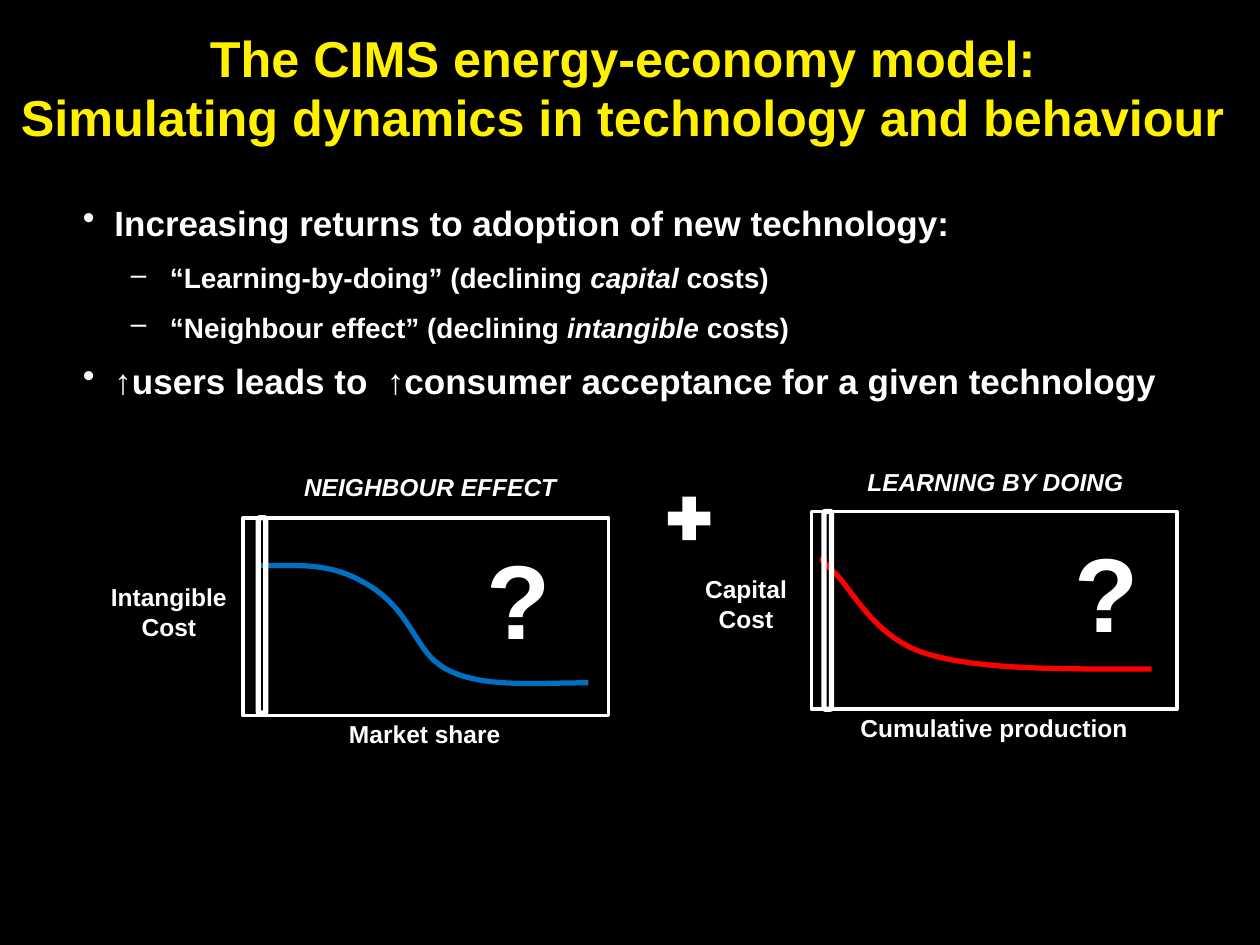
from pptx import Presentation
from pptx.dml.color import RGBColor
from pptx.enum.shapes import MSO_SHAPE
from pptx.enum.text import PP_ALIGN
from pptx.util import Pt
from lxml.etree import SubElement
from pptx.oxml.ns import qn

BLACK = RGBColor(0x00, 0x00, 0x00)
WHITE = RGBColor(0xFF, 0xFF, 0xFF)
PALE = RGBColor(0xF9, 0xF9, 0xF9)
YELLOW = RGBColor(0xFF, 0xF1, 0x00)
BLUE = RGBColor(0x00, 0x70, 0xC0)
RED = RGBColor(0xFF, 0x00, 0x00)


class Deck:
    font = "Arial"
    ink = WHITE
    steps = 16

    def __init__(self, slide):
        self.slide = slide
        self.shapes = slide.shapes
        slide.background.fill.solid()
        slide.background.fill.fore_color.rgb = BLACK

    def frame(self, box, inset=3.6):
        frame = self.shapes.add_textbox(*map(Pt, box)).text_frame
        frame.word_wrap = True
        frame.margin_top = Pt(inset)
        return frame

    def run(self, para, text, size, color=None, slant=False):
        run = para.add_run()
        run.text = text
        font = run.font
        font.name, font.size = self.font, Pt(size)
        font.bold, font.italic = True, slant
        font.color.rgb = color or self.ink

    def title(self, box, lines, size, color):
        para = self.frame(box, 5.8).paragraphs[0]
        para.alignment = PP_ALIGN.CENTER
        para.line_spacing = Pt(34)
        for i, line in enumerate(lines):
            if i:
                para.add_line_break()
            self.run(para, line, size, color)

    def label(self, box, lines, size=14, slant=False):
        frame = self.frame(box)
        for i, line in enumerate(lines):
            para = frame.add_paragraph() if i else frame.paragraphs[0]
            para.alignment = PP_ALIGN.CENTER
            self.run(para, line, size, slant=slant)

    def bullets(self, box, items):
        styles = [(20, 18, 18, "•", PALE, 10), (16, 49.68, 22.32, "–", WHITE, 9)]
        frame = self.frame(box, 6.3)
        for i, (level, runs) in enumerate(items):
            size, left, hang, mark, color, after = styles[level]
            para = frame.add_paragraph() if i else frame.paragraphs[0]
            para.level = level
            para.space_after = Pt(after)
            props = para._p.get_or_add_pPr()
            props.set("marL", str(Pt(left)))
            props.set("indent", str(-Pt(hang)))
            tint = SubElement(props, qn("a:buClr"))
            SubElement(tint, qn("a:srgbClr")).set("val", str(color))
            SubElement(props, qn("a:buChar")).set("char", mark)
            for text, slant in runs:
                self.run(para, text, size, slant=slant)

    def outline(self, kind, box, width):
        shape = self.shapes.add_shape(kind, *map(Pt, box))
        shape.shadow.inherit = False
        shape.fill.background()
        shape.line.color.rgb = self.ink
        shape.line.width = Pt(width)

    def solid(self, kind, box):
        shape = self.shapes.add_shape(kind, *map(Pt, box))
        shape.shadow.inherit = False
        shape.fill.solid()
        shape.fill.fore_color.rgb = self.ink
        shape.line.fill.background()

    def curve(self, knots, color):
        dots = []
        for k in range(0, len(knots) - 1, 3):
            a, b, c, d = knots[k:k + 4]
            for n in range(1, self.steps + 1):
                t = n / self.steps
                u = 1 - t
                dots.append(tuple(
                    Pt(u**3 * p + 3 * u * u * t * q + 3 * u * t * t * r + t**3 * s)
                    for p, q, r, s in zip(a, b, c, d)))
        form = self.shapes.build_freeform(*map(Pt, knots[0]), scale=1.0)
        form.add_line_segments(dots, close=False)
        shape = form.convert_to_shape()
        shape.shadow.inherit = False
        shape.fill.background()
        shape.line.color.rgb = color
        shape.line.width = Pt(3)


def main():
    show = Presentation()
    show.slide_width, show.slide_height = Pt(720), Pt(540)
    deck = Deck(show.slides.add_slide(show.slide_layouts[6]))

    deck.title((0, 10.1, 712, 90), [
        "The CIMS energy-economy model:",
        "Simulating dynamics in technology and behaviour"], 28.8, YELLOW)
    deck.bullets((40.3, 108.7, 647.3, 79.2), [
        (0, [("Increasing returns to adoption of new technology:", False)]),
        (1, [("“Learning-by-doing” (declining ", False),
             ("capital ", True), ("costs)", False)]),
        (1, [("“Neighbour effect” (declining ", False),
             ("intangible", True), (" costs)", False)]),
        (0, [("↑users leads to  ↑consumer acceptance for a given technology",
              False)])])

    for left, top in [(139, 295.9), (463.7, 292.3)]:
        deck.outline(MSO_SHAPE.RECTANGLE, (left, top, 208.8, 113), 2)

    deck.label((171.4, 407.5, 142.6, 24.5), ["Market share"])
    deck.label((474.5, 403.9, 187.2, 24.5), ["Cumulative production"])
    deck.label((25.2, 329.3, 142.6, 41), ["Intangible", "Cost"])
    deck.label((355, 324.7, 142.6, 41), ["Capital", "Cost"])

    deck.curve([(147, 323.2), (174.2, 323.2), (191.5, 321), (214.6, 337),
                (237.6, 353.5), (237.6, 375), (257.8, 383.8),
                (278, 393), (306.7, 390.2), (336.2, 390.2)], BLUE)
    deck.curve([(472.3, 319.7), (469.4, 319), (467.3, 318.2), (476.6, 326.9),
                (486.7, 336.2), (499.7, 365), (529.9, 373.7),
                (560.2, 383), (609.1, 382.3), (658.1, 382.3)], RED)

    deck.label((151.2, 266.4, 189.4, 24.5), ["NEIGHBOUR EFFECT"], slant=True)
    deck.label((467.3, 263.5, 203, 24.5), ["LEARNING BY DOING"], slant=True)
    deck.solid(MSO_SHAPE.MATH_PLUS, (377.3, 279.4, 33.1, 33.8))

    for box in [(147.6, 295.9, 4.3, 111.6), (470.9, 292.3, 4.3, 113)]:
        deck.outline(MSO_SHAPE.ROUNDED_RECTANGLE, box, 3)
    for left, top in [(257, 301.7), (592.6, 298.1)]:
        deck.label((left, top, 79.2, 79.9), ["?"], 60)

    show.save("out.pptx")


if __name__ == "__main__":
    main()
